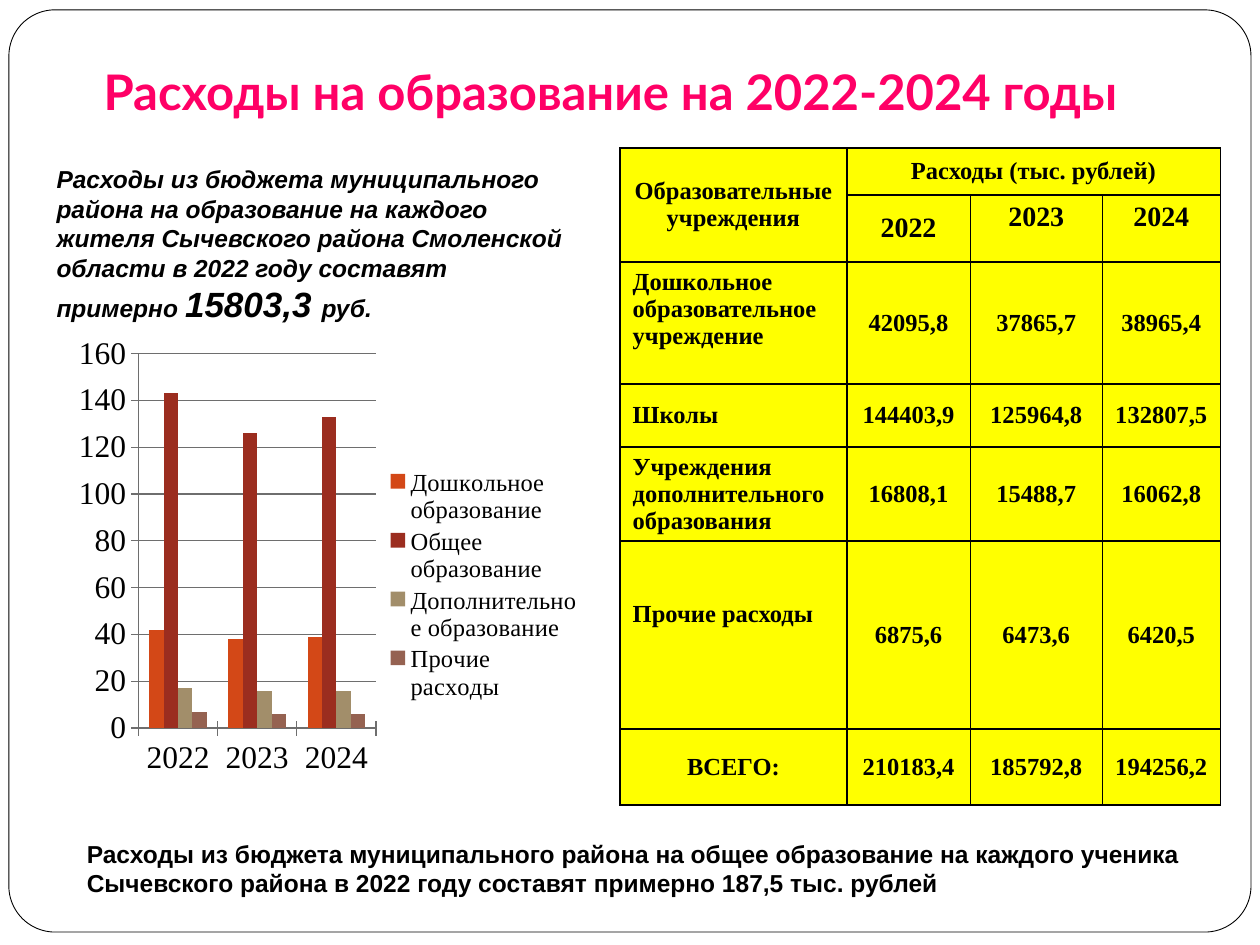
from lxml import etree
from pptx import Presentation
from pptx.chart import data
from pptx.dml.color import RGBColor
from pptx.enum import chart as ch, shapes, text
from pptx.oxml import parse_xml
from pptx.oxml.ns import nsdecls, qn
from pptx.util import Cm, Pt

TITLE = "Расходы на образование на 2022-2024 годы"
PER_RESIDENT = [
    ("Расходы из бюджета муниципального района на образование на каждого "
     "жителя Сычевского района Смоленской области в 2022 году составят примерно ", "body"),
    ("15803,3 ", "accent"),
    ("руб.", "body"),
]
PER_PUPIL = [
    ("Расходы из бюджета муниципального района на общее образование на каждого ученика "
     "Сычевского района в 2022 году составят примерно 187,5 тыс. рублей", "body"),
]
YEARS = ["2022", "2023", "2024"]
TABLE_ROWS = [
    ["Образовательные учреждения", "Расходы (тыс. рублей)", "", ""],
    ["", *YEARS],
    ["Дошкольное образовательное учреждение", "42095,8", "37865,7", "38965,4"],
    ["Школы", "144403,9", "125964,8", "132807,5"],
    ["Учреждения\nдополнительного\nобразования", "16808,1", "15488,7", "16062,8"],
    ["Прочие расходы", "6875,6", "6473,6", "6420,5"],
    ["ВСЕГО:", "210183,4", "185792,8", "194256,2"],
]
COL_WIDTHS = [4.57, 2.49, 2.66, 2.38]
ROW_HEIGHTS = [0.95, 1.35, 2.46, 1.27, 1.9, 3.79, 1.53]
SERIES = [
    ("Дошкольное образование", "D34817", (42, 38, 39)),
    ("Общее образование", "9B2D1F", (143, 126, 133)),
    ("Дополнительное образование", "A28E6A", (17, 16, 16)),
    ("Прочие расходы", "956251", (7, 6, 6)),
]
THEME = {
    "title_font": "Lato", "text_font": "Arial", "data_font": "Times New Roman",
    "title_color": "FF0066", "ink": "000000", "paper": "FFFFFF",
    "cell": "FFFF00", "grid": "6E6E6E",
    "title": 28, "body": 14, "accent": 20, "year": 16, "axis": 18,
}
LEFT, CENTER, JUSTIFY = text.PP_ALIGN.LEFT, text.PP_ALIGN.CENTER, text.PP_ALIGN.JUSTIFY
TOP, MIDDLE = text.MSO_ANCHOR.TOP, text.MSO_ANCHOR.MIDDLE


def rgb(name):
    return RGBColor.from_string(THEME.get(name, name))


def style(font, face, size, color="ink", bold=True):
    font.name, font.size, font.bold = THEME[face], Pt(THEME[size]), bold
    font.color.rgb = rgb(color)


def box(*lengths):
    return [Cm(v) for v in lengths]


def add_frame(slide):
    sp = slide.shapes.add_shape(shapes.MSO_SHAPE.ROUNDED_RECTANGLE, *box(0.18, 0.2, 25.04, 18.59))
    sp.adjustments[0] = 0.05
    sp.shadow.inherit = False
    sp.fill.solid()
    sp.fill.fore_color.rgb = rgb("paper")
    sp.line.color.rgb = rgb("ink")
    sp.line.width = Pt(0.5)
    slide.shapes._spTree.insert(2, sp._element)  # behind the title


def add_title(slide):
    sp = slide.shapes.title
    sp.left, sp.top, sp.width, sp.height = box(0, 0.71, 24.61, 1.96)
    tf = sp.text_frame
    tf.text = TITLE
    tf.auto_size = text.MSO_AUTO_SIZE.NONE
    tf.vertical_anchor = text.MSO_ANCHOR.BOTTOM
    tf.margin_bottom = Cm(0.25)
    p = tf.paragraphs[0]
    p.alignment = CENTER
    style(p.font, "title_font", "title", "title_color")


def add_note(slide, runs, place, italic=False):
    tf = slide.shapes.add_textbox(*box(*place)).text_frame
    tf.word_wrap = True
    tf.vertical_anchor = MIDDLE
    p = tf.paragraphs[0]
    style(p.font, "text_font", "body")
    p.font.italic = italic
    for words, size in runs:
        r = p.add_run()
        r.text = words
        style(r.font, "text_font", size)
        r.font.italic = italic


def add_borders(cell):
    tc_pr = cell._tc.get_or_add_tcPr()
    for side in ("lnL", "lnR", "lnT", "lnB"):
        tc_pr.append(parse_xml(
            f'<a:{side} {nsdecls("a")} w="12700"><a:solidFill>'
            f'<a:srgbClr val="{THEME["ink"]}"/></a:solidFill></a:{side}>'))


def cell_layout(row, col):
    """Alignment and anchor of a table cell."""
    if row == 1 and col > 1:
        return CENTER, TOP
    if col == 0 and row in (2, 5):
        return (JUSTIFY if row == 2 else LEFT), TOP
    return (JUSTIFY if col == 0 and row in (3, 4) else CENTER), MIDDLE


def add_cost_table(slide):
    table = slide.shapes.add_table(
        len(ROW_HEIGHTS), len(COL_WIDTHS),
        *box(12.5, 2.98, sum(COL_WIDTHS), sum(ROW_HEIGHTS))).table
    table.first_row = table.horz_banding = False
    for column, width in zip(table.columns, COL_WIDTHS):
        column.width = Cm(width)
    for row, height in zip(table.rows, ROW_HEIGHTS):
        row.height = Cm(height)
    for i, row in enumerate(TABLE_ROWS):
        for j, words in enumerate(row):
            cell = table.cell(i, j)
            add_borders(cell)
            cell.fill.solid()
            cell.fill.fore_color.rgb = rgb("cell")
            cell.text = words
            alignment, cell.vertical_anchor = cell_layout(i, j)
            for p in cell.text_frame.paragraphs:
                p.alignment = alignment
                style(p.font, "data_font", "year" if i == 1 and j else "body")
    table.cell(5, 0).margin_top = Cm(1.2)
    table.cell(0, 0).merge(table.cell(1, 0))
    table.cell(0, 1).merge(table.cell(0, 3))


def manual_layout(x, y, w, h, inner=False):
    layout = parse_xml(f'<c:layout {nsdecls("c")}><c:manualLayout/></c:layout>')
    parts = [("layoutTarget", "inner")] if inner else []
    parts += [("xMode", "edge"), ("yMode", "edge"), ("x", x), ("y", y), ("w", w), ("h", h)]
    for tag, value in parts:
        etree.SubElement(layout[0], qn(f"c:{tag}")).set("val", str(value))
    return layout


def place_part(part, layout):
    """Replace the layout of a plot area or legend."""
    for old in part.findall(qn("c:layout")):
        part.remove(old)
    position = part.find(qn("c:legendPos"))
    part.insert(0 if position is None else part.index(position) + 1, layout)


def add_cost_chart(slide):
    chart_data = data.CategoryChartData()
    chart_data.categories = YEARS
    for name, _, values in SERIES:
        chart_data.add_series(name, values)
    chart = slide.shapes.add_chart(
        ch.XL_CHART_TYPE.COLUMN_CLUSTERED, *box(0.79, 6.55, 11.13, 10.49), chart_data).chart
    style(chart.font, "data_font", "axis", bold=False)
    chart.has_title = False
    plot = chart.plots[0]
    plot.vary_by_categories = False
    plot.gap_width, plot.overlap = 150, 0
    for series, (_, color, _) in zip(plot.series, SERIES):
        series.format.fill.solid()
        series.format.fill.fore_color.rgb = rgb(color)
    axes = chart.category_axis, chart.value_axis
    for axis in axes:
        axis.major_tick_mark = ch.XL_TICK_MARK.CROSS
        axis.format.line.color.rgb = rgb("grid")
    axes[1].minimum_scale, axes[1].maximum_scale, axes[1].major_unit = 0, 160, 20
    axes[1].major_gridlines.format.line.color.rgb = rgb("grid")
    chart.has_legend = True
    chart.legend.position = ch.XL_LEGEND_POSITION.RIGHT
    chart.legend.include_in_layout = False
    style(chart.legend.font, "data_font", "body", bold=False)
    place_part(chart._chartSpace.chart.plotArea, manual_layout(0.18, 0.055, 0.43, 0.72, True))
    place_part(chart.legend._element, manual_layout(0.63, 0.27, 0.35, 0.46))


def main():
    prs = Presentation()
    prs.slide_width, prs.slide_height = Cm(25.4), Cm(19.05)
    slide = prs.slides.add_slide(prs.slide_layouts.get_by_name("Title Only"))
    add_frame(slide)
    add_title(slide)
    add_cost_table(slide)
    add_note(slide, PER_RESIDENT, (0.89, 3.12, 10.8, 3.61), italic=True)
    add_note(slide, PER_PUPIL, (1.5, 16.92, 22.86, 1.17))
    add_cost_chart(slide)
    prs.save("out.pptx")


if __name__ == "__main__":
    main()
